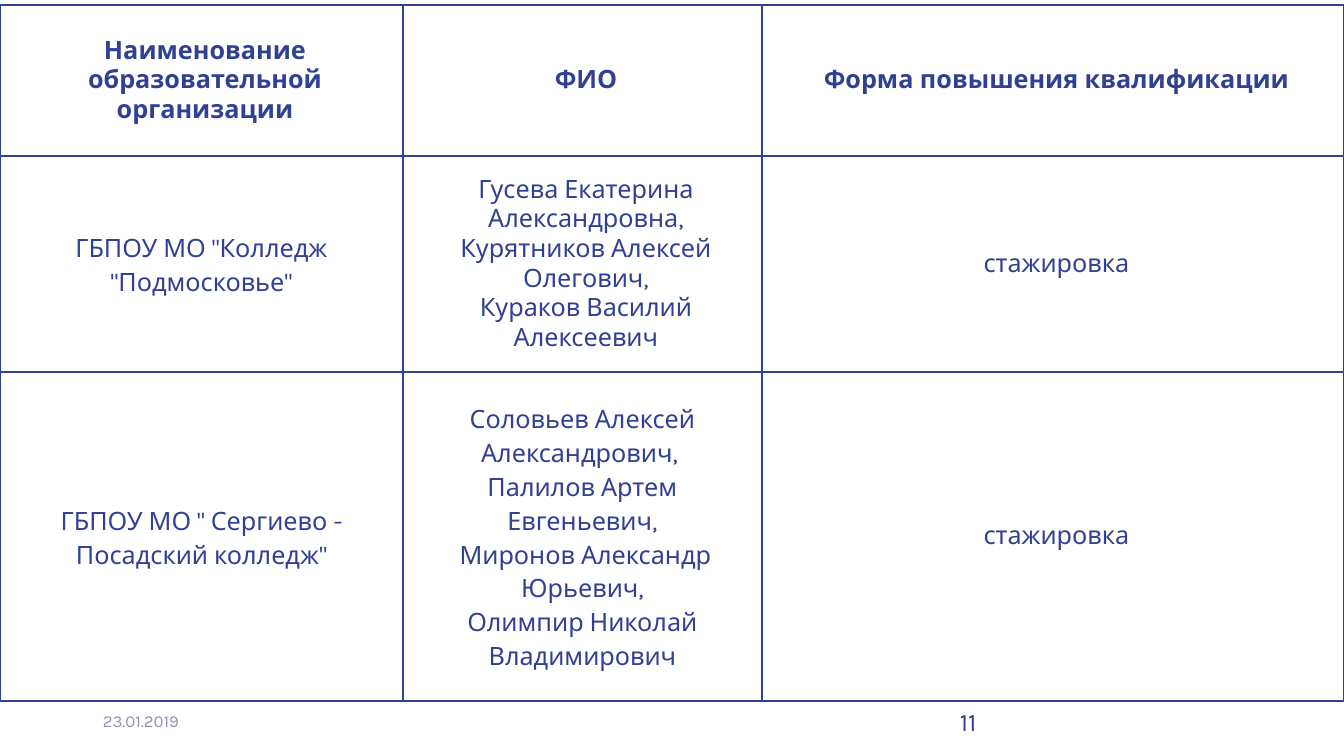
from lxml.etree import SubElement
from pptx import Presentation
from pptx.dml.color import RGBColor
from pptx.enum.text import MSO_ANCHOR, PP_ALIGN
from pptx.oxml.ns import qn
from pptx.util import Emu, Pt

NAVY = RGBColor(0x30, 0x41, 0x94)
MUTED = RGBColor(0x8F, 0x93, 0xB7)

COLUMN_WIDTHS = (403, 359, 582)
ROW_HEIGHTS = (151, 216, 329)

INDENTED = {"indent": 7}
LOOSE = {"spacing": 1.15}
HEADING = {"bold": True, **INDENTED}

# Each cell holds its lines and their format.
TRAINING_ROWS = (
    (
        (["Наименование образовательной организации"], HEADING),
        (["ФИО"], HEADING),
        (["Форма повышения квалификации"], HEADING),
    ),
    (
        (['ГБПОУ МО "Колледж "Подмосковье"'], LOOSE),
        (["Гусева Екатерина Александровна,",
          "Курятников Алексей Олегович,",
          "Кураков Василий Алексеевич"], INDENTED),
        (["стажировка"], INDENTED),
    ),
    (
        (['ГБПОУ МО " Сергиево - Посадский колледж"'], LOOSE),
        (["Соловьев Алексей Александрович, ",
          "Палилов Артем Евгеньевич,",
          " Миронов Александр Юрьевич,",
          "Олимпир Николай Владимирович"], LOOSE),
        (["стажировка"], INDENTED),
    ),
)


def px(count):
    return Emu(round(count * 914400 / 100.8))


def write_lines(frame, lines, font="Karla", size=18, color=NAVY, bold=False,
                align=PP_ALIGN.LEFT, indent=0, spacing=None):
    """Fill a text frame with one paragraph per line, all in one format."""
    for number, line in enumerate(lines):
        paragraph = frame.add_paragraph() if number else frame.paragraphs[0]
        paragraph.alignment = align
        paragraph.line_spacing = spacing
        if indent:
            paragraph._p.get_or_add_pPr().set("marL", str(px(indent)))
        run = paragraph.add_run()
        run.text = line
        run.font.name = font
        run.font.size = Pt(size)
        run.font.bold = bold
        run.font.color.rgb = color


class SlideBuilder:
    def __init__(self, slide, line_color=NAVY, line_width=1):
        self.slide = slide
        self.line_color = line_color
        self.line_width = line_width

    def label(self, text, left, top, width, height, anchor=MSO_ANCHOR.TOP, **style):
        box = self.slide.shapes.add_textbox(px(left), px(top), px(width), px(height))
        box.text_frame.word_wrap = True
        box.text_frame.vertical_anchor = anchor
        write_lines(box.text_frame, [text], **style)

    def table(self, rows, left, top, widths, heights):
        grid = self.slide.shapes.add_table(
            len(heights), len(widths), px(left), px(top),
            px(sum(widths)), px(sum(heights))).table
        grid.first_row = grid.horz_banding = False
        for column, width in zip(grid.columns, widths):
            column.width = px(width)
        for row, height, contents in zip(grid.rows, heights, rows):
            row.height = px(height)
            for cell, (lines, style) in zip(row.cells, contents):
                self.cell(cell, lines, style)

    def cell(self, cell, lines, style):
        cell.margin_left = cell.margin_right = px(8)
        cell.margin_top = cell.margin_bottom = 0
        cell.vertical_anchor = MSO_ANCHOR.MIDDLE
        write_lines(cell.text_frame, lines, align=PP_ALIGN.CENTER, **style)
        self.borders(cell)
        cell.fill.background()

    def borders(self, cell):
        properties = cell._tc.get_or_add_tcPr()
        for side in ("a:lnL", "a:lnR", "a:lnT", "a:lnB"):
            line = SubElement(properties, qn(side), w=str(Pt(self.line_width)))
            fill = SubElement(line, qn("a:solidFill"))
            SubElement(fill, qn("a:srgbClr"), val=str(self.line_color))


def main():
    deck = Presentation()
    deck.slide_width, deck.slide_height = px(1344), px(756)
    builder = SlideBuilder(deck.slides.add_slide(deck.slide_layouts[6]))
    builder.label("23.01.2019", 93, 701, 302, 40,
                  anchor=MSO_ANCHOR.MIDDLE, size=12, color=MUTED)
    builder.label("11", 950, 701, 302, 40)
    builder.table(TRAINING_ROWS, 0, 5, COLUMN_WIDTHS, ROW_HEIGHTS)
    deck.save("out.pptx")


if __name__ == "__main__":
    main()
